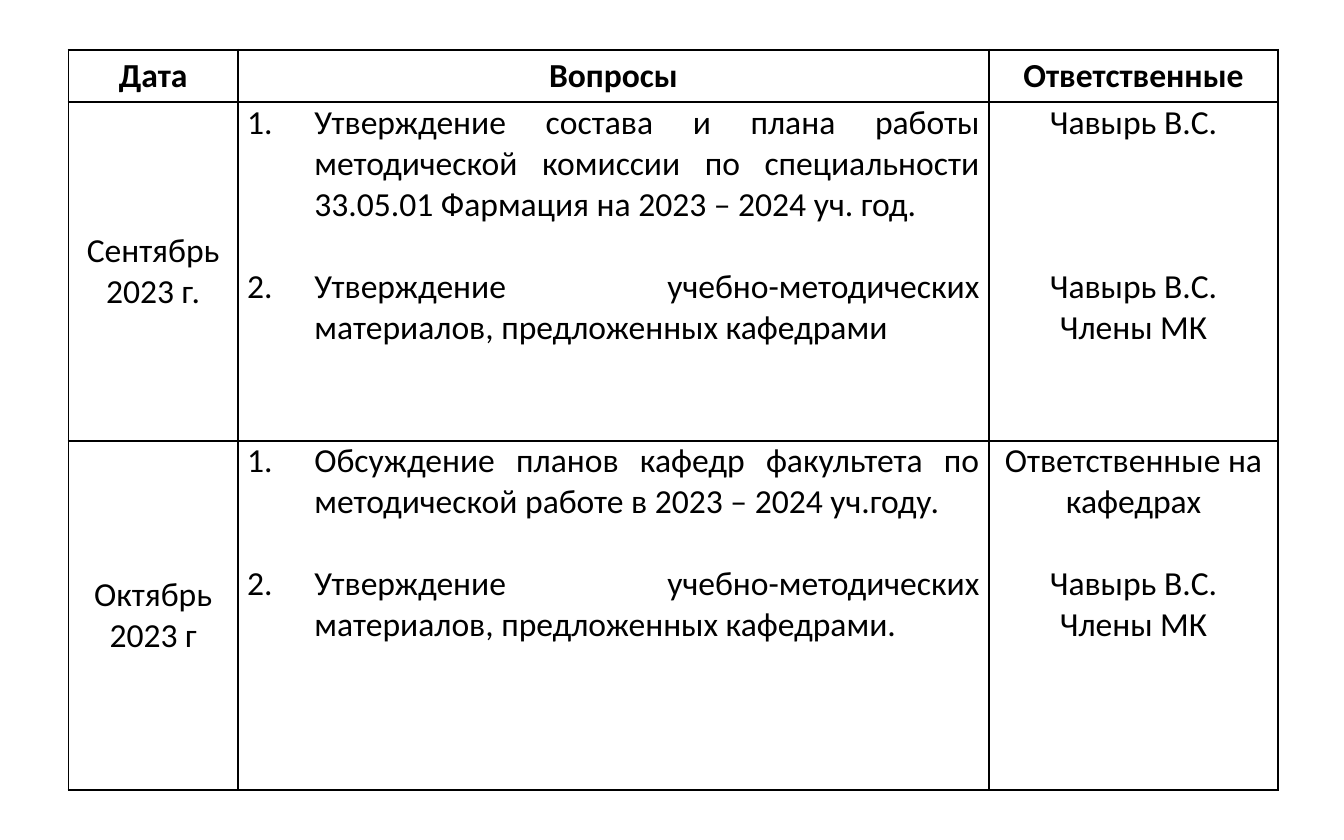
from dataclasses import dataclass

from lxml.etree import SubElement
from pptx import Presentation
from pptx.dml.color import RGBColor
from pptx.enum.text import MSO_ANCHOR as Anchor, PP_ALIGN as Align
from pptx.oxml import parse_xml
from pptx.oxml.ns import nsdecls, qn
from pptx.util import Inches, Pt


@dataclass(frozen=True)
class Theme:
    font: str = "Calibri"
    size: int = 18
    line_height: int = 22
    ink: str = "000000"
    border_width: int = 1
    side_margin: float = 0.07
    number_indent: float = 0.5


THEME = Theme()
COLUMNS = [1.26, 5.59, 2.15]
ROWS = [0.39, 2.52, 2.6]
HEADERS = ["Дата", "Вопросы", "Ответственные"]

# Each month: date lines, questions, and people as (name, empty lines above).
MONTHS = [
    (
        ["Сентябрь", "2023 г."],
        [
            "Утверждение состава и плана работы методической комиссии "
            "по специальности 33.05.01 Фармация на 2023 – 2024 уч. год.",
            "Утверждение учебно-методических материалов, предложенных кафедрами",
        ],
        [("Чавырь В.С.", 0), ("Чавырь В.С.", 3), ("Члены МК", 0)],
    ),
    (
        ["Октябрь", "2023 г"],
        [
            "Обсуждение планов кафедр факультета по методической работе "
            "в 2023 – 2024 уч.году.",
            "Утверждение учебно-методических материалов, предложенных кафедрами.",
        ],
        [("Ответственные на кафедрах", 0), ("Чавырь В.С.", 1), ("Члены МК", 0)],
    ),
]


def draw_borders(cell):
    properties = cell._tc.get_or_add_tcPr()
    for position, side in enumerate("LRTB"):
        border = parse_xml(
            f'<a:ln{side} {nsdecls("a")} w="{Pt(THEME.border_width)}">'
            f'<a:solidFill><a:srgbClr val="{THEME.ink}"/></a:solidFill></a:ln{side}>'
        )
        properties.insert(position, border)


def fill_cell(cell, lines, align=Align.CENTER, anchor=Anchor.MIDDLE, bold=False):
    """Write (text, empty lines above) pairs, one paragraph each."""
    cell.fill.background()
    draw_borders(cell)
    cell.vertical_anchor = anchor
    cell.margin_left = cell.margin_right = Inches(THEME.side_margin)
    cell.margin_top = cell.margin_bottom = 0
    frame = cell.text_frame
    frame.text = "\n".join(text for text, _ in lines)
    for paragraph, (_, gap) in zip(frame.paragraphs, lines):
        paragraph.alignment = align
        paragraph.space_before = Pt(gap * THEME.line_height)
        for run in paragraph.runs:
            run.font.name = THEME.font
            run.font.size = Pt(THEME.size)
            run.font.bold = bold
            run.font.color.rgb = RGBColor.from_string(THEME.ink)


def number_paragraphs(cell):
    indent = Inches(THEME.number_indent)
    for number, paragraph in enumerate(cell.text_frame.paragraphs, start=1):
        properties = paragraph._p.get_or_add_pPr()
        properties.set("marL", str(indent))
        properties.set("indent", str(-indent))
        SubElement(properties, qn("a:buFont"), typeface="+mj-lt")
        SubElement(properties, qn("a:buAutoNum"), type="arabicPeriod", startAt=str(number))


def add_plan_table(slide):
    frame = slide.shapes.add_table(
        len(ROWS), len(COLUMNS), Inches(0.51), Inches(0.37),
        Inches(sum(COLUMNS)), Inches(sum(ROWS)),
    )
    table = frame.table
    table.first_row = table.horz_banding = False
    for column, width in zip(table.columns, COLUMNS):
        column.width = Inches(width)
    for row, height in zip(table.rows, ROWS):
        row.height = Inches(height)
    return table


def fill_month(table, row, dates, questions, people):
    fill_cell(table.cell(row, 0), [(text, 0) for text in dates])
    question_cell = table.cell(row, 1)
    question_lines = [(text, min(index, 1)) for index, text in enumerate(questions)]
    fill_cell(question_cell, question_lines, Align.JUSTIFY, Anchor.TOP)
    number_paragraphs(question_cell)
    fill_cell(table.cell(row, 2), people, anchor=Anchor.TOP)


def main():
    presentation = Presentation()
    presentation.slide_width = Inches(10)
    presentation.slide_height = Inches(6.25)
    slide = presentation.slides.add_slide(presentation.slide_layouts[6])
    table = add_plan_table(slide)
    for column, header in enumerate(HEADERS):
        fill_cell(table.cell(0, column), [(header, 0)], bold=True)
    for row, month in enumerate(MONTHS, start=1):
        fill_month(table, row, *month)
    presentation.save("out.pptx")


if __name__ == "__main__":
    main()
